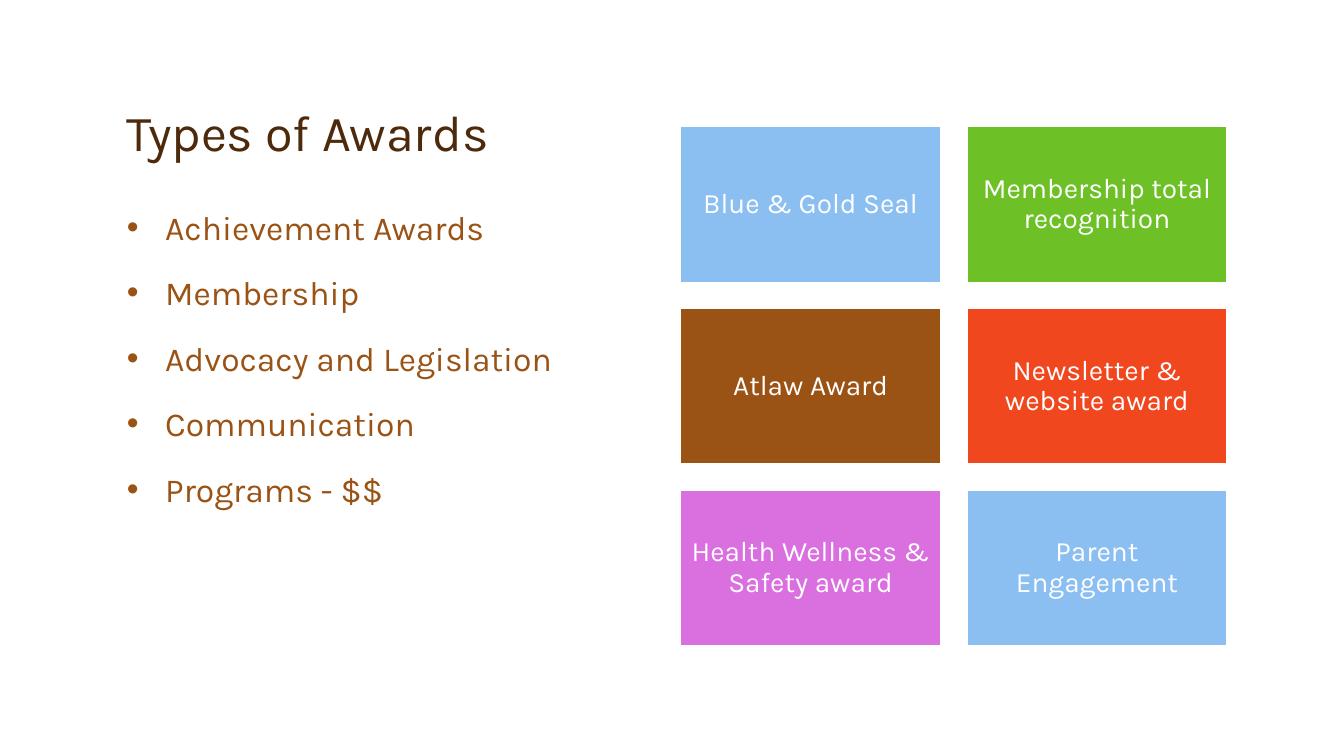
"""Build the Types of Awards slide."""
from dataclasses import dataclass
from typing import Any

import lxml.etree
import pptx
import pptx.dml.color
import pptx.enum.shapes
import pptx.enum.text
import pptx.oxml.ns
import pptx.util

Inches = pptx.util.Inches
Pt = pptx.util.Pt
Align = pptx.enum.text.PP_ALIGN
Anchor = pptx.enum.text.MSO_ANCHOR


@dataclass(frozen=True)
class Theme:
    """Colours, font and type sizes."""
    font: str = "Karla"
    title_size: int = 36
    body_size: int = 24
    tile_size: int = 20
    dark: str = "4D2A0B"
    brown: str = "9A5315"
    white: str = "FFFFFF"
    blue: str = "8BBEF1"
    green: str = "6DC025"
    red: str = "F1471F"
    orchid: str = "DA6FDF"


@dataclass(frozen=True)
class Tile:
    """An award name on its coloured tile."""
    label: str
    color: str


THEME = Theme()
TILES = [
    Tile("Blue & Gold Seal", THEME.blue),
    Tile("Membership total recognition", THEME.green),
    Tile("Atlaw Award", THEME.brown),
    Tile("Newsletter & website award", THEME.red),
    Tile("Health Wellness & Safety award", THEME.orchid),
    Tile("Parent Engagement", THEME.blue),
]
AWARD_TYPES = ["Achievement Awards", "Membership", "Advocacy and Legislation",
               "Communication", "Programs - $$"]


def rgb(color: str) -> pptx.dml.color.RGBColor:
    """Turn a hex string into a colour."""
    return pptx.dml.color.RGBColor.from_string(color)


def apply(target: Any, values: dict[str, Any]) -> None:
    """Set every attribute in the dict on the target."""
    for name, value in values.items():
        setattr(target, name, value)


def add_bullet(para: Any) -> None:
    """Give a paragraph a hanging round bullet."""
    properties = para._p.get_or_add_pPr()
    indent = Inches(0.38)
    properties.set("marL", str(indent))
    properties.set("indent", str(-indent))
    for tag, key, value in (("a:buFont", "typeface", "Arial"), ("a:buChar", "char", "•")):
        lxml.etree.SubElement(properties, pptx.oxml.ns.qn(tag)).set(key, value)


def write(box: Any, lines: list[str], size: int, color: str, frame_format: dict[str, Any],
          para_format: dict[str, Any], bulleted: bool = False, gap: float = 0) -> None:
    """Fill a box with equally styled paragraphs."""
    frame = box.text_frame
    apply(frame, {"word_wrap": True, **frame_format})
    for index, line in enumerate(lines):
        para = frame.paragraphs[0] if index == 0 else frame.add_paragraph()
        apply(para, {**para_format, "space_before": Pt(gap if index else 0)})
        if bulleted:
            add_bullet(para)
        span = para.add_run()
        span.text = line
        apply(span.font, {"name": THEME.font, "size": Pt(size)})
        span.font.color.rgb = rgb(color)


def add_tile(page: Any, tile: Tile, left: float, top: float) -> None:
    """Draw one award tile."""
    box = page.shapes.add_shape(pptx.enum.shapes.MSO_SHAPE.RECTANGLE, Inches(left),
                                Inches(top), Inches(2.58), Inches(1.55))
    box.shadow.inherit = False
    box.fill.solid()
    box.fill.fore_color.rgb = rgb(tile.color)
    box.line.color.rgb = rgb(THEME.white)
    box.line.width = Pt(1)
    sides = ("left", "top", "right", "bottom")
    margins = {f"margin_{side}": Inches(0.08) for side in sides}
    write(box, [tile.label], THEME.tile_size, THEME.white,
          {"vertical_anchor": Anchor.MIDDLE, **margins},
          {"alignment": Align.CENTER, "line_spacing": 0.9})


def main() -> None:
    """Build and save the deck."""
    deck = pptx.Presentation()
    apply(deck, {"slide_width": Inches(13.33), "slide_height": Inches(7.5)})
    page = deck.slides.add_slide(deck.slide_layouts[6])
    title = page.shapes.add_textbox(Inches(1.16), Inches(0.33), Inches(11), Inches(1.33))
    write(title, ["Types of Awards"], THEME.title_size, THEME.dark,
          {"vertical_anchor": Anchor.BOTTOM}, {"line_spacing": 0.9})
    body = page.shapes.add_textbox(Inches(1.16), Inches(2), Inches(5.42), Inches(4.58))
    write(body, AWARD_TYPES, THEME.body_size, THEME.brown,
          {"vertical_anchor": Anchor.TOP}, {}, bulleted=True, gap=18)
    for index, tile in enumerate(TILES):
        row, column = divmod(index, 2)
        add_tile(page, tile, 6.75 + 2.84 * column, 1.25 + 1.805 * row)
    deck.save("out.pptx")


if __name__ == "__main__":
    main()
